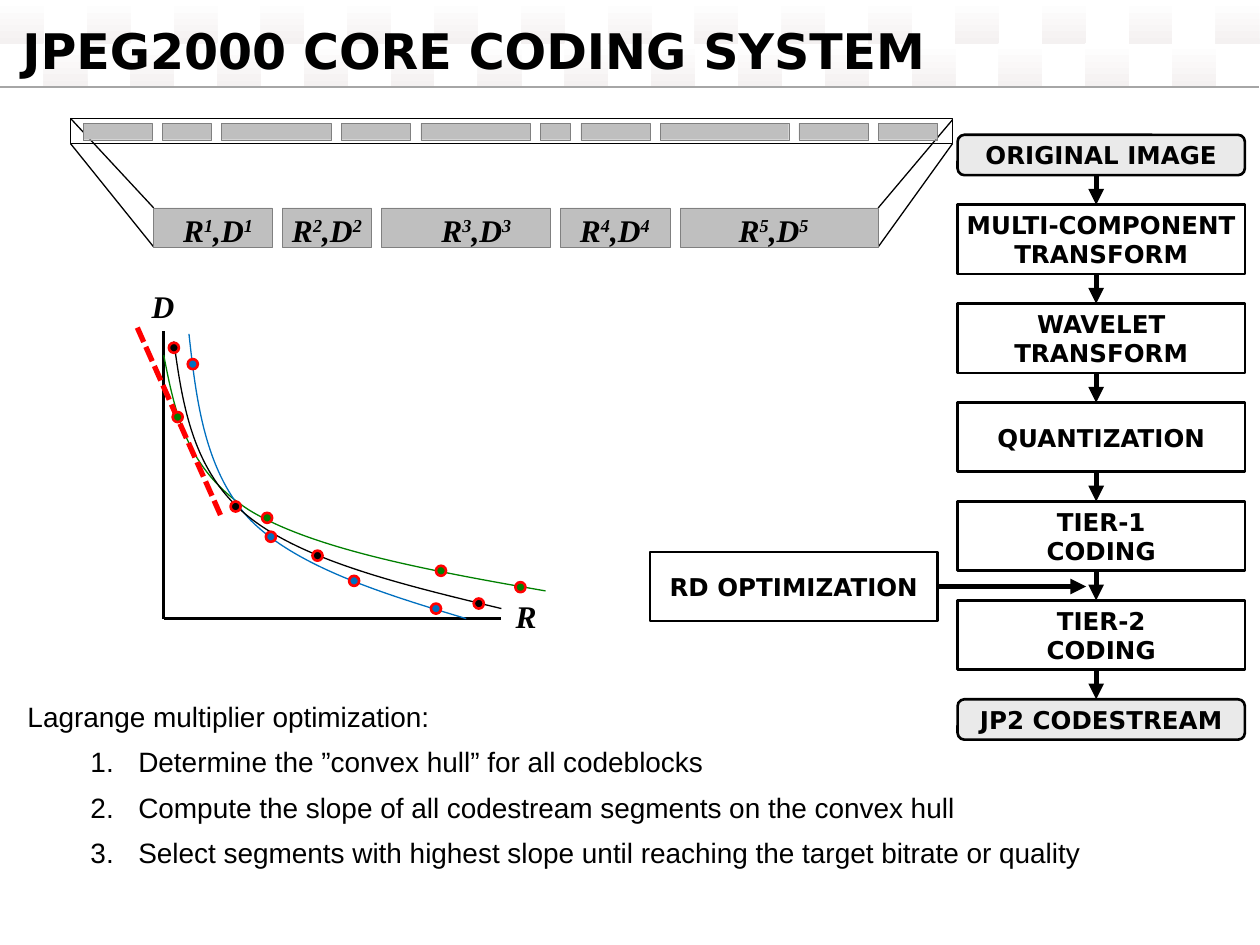
from lxml import etree
from pptx import Presentation
from pptx.dml.color import RGBColor
from pptx.enum.dml import MSO_LINE
from pptx.enum.shapes import MSO_CONNECTOR, MSO_SHAPE
from pptx.enum.text import MSO_ANCHOR, MSO_AUTO_SIZE, PP_ALIGN
from pptx.oxml.ns import qn
from pptx.util import Inches, Pt

RECT, ROUNDED, DOT = MSO_SHAPE.RECTANGLE, MSO_SHAPE.ROUNDED_RECTANGLE, MSO_SHAPE.OVAL
STRAIGHT = MSO_CONNECTOR.STRAIGHT
LEFT, CENTER = PP_ALIGN.LEFT, PP_ALIGN.CENTER

BLACK = RGBColor(0x00, 0x00, 0x00)
WHITE = RGBColor(0xFF, 0xFF, 0xFF)
RED = RGBColor(0xFF, 0x00, 0x00)
GREEN = RGBColor(0x00, 0x80, 0x00)
BLUE = RGBColor(0x00, 0x70, 0xC0)
TILE = RGBColor(0xF4, 0xF1, 0xF1)
RULE = RGBColor(0xA6, 0xA6, 0xA6)
SEGMENT = RGBColor(0xBF, 0xBF, 0xBF)
SEGMENT_EDGE = RGBColor(0x80, 0x80, 0x80)
TERMINAL = RGBColor(0xEA, 0xEA, 0xEA)

SANS, BODY, SERIF = "DejaVu Sans", "Arial", "Times New Roman"

# Content
TITLE = "JPEG2000 CORE CODING SYSTEM"
INTRO = "Lagrange multiplier optimization:"
STEPS = [
    "Determine the ”convex hull” for all codeblocks",
    "Compute the slope of all codestream segments on the convex hull",
    "Select segments with highest slope until reaching the target bitrate or quality",
]
FLOW = [
    "ORIGINAL IMAGE", "MULTI-COMPONENT\nTRANSFORM", "WAVELET\nTRANSFORM",
    "QUANTIZATION", "TIER-1\nCODING", "TIER-2\nCODING", "JP2 CODESTREAM",
]
STREAM_WIDTHS = [0.55, 0.39, 0.87, 0.55, 0.87, 0.24, 0.55, 1.02, 0.55, 0.47]
# Segment width, label left, label width
CODEBLOCK = [(0.94, 1.22, 1.02), (0.71, 2.16, 0.87), (1.34, 3.27, 1.02),
             (0.87, 4.37, 1.02), (1.57, 5.63, 1.02)]
ZOOM_LINES = [(0.56, 0.94, 1.22, 1.65), (0.56, 1.14, 1.22, 1.96),
              (7.56, 0.95, 6.97, 1.65), (7.56, 1.14, 6.97, 1.96)]
# Colour, Bezier points, top left corners of the markers
CURVES = [
    (GREEN, [(1.3, 2.82), (1.39, 3.28), (1.48, 3.73), (1.98, 4.05),
             (2.49, 4.36), (3.41, 4.53), (4.33, 4.69)],
     [(1.37, 3.27), (2.08, 4.07), (3.46, 4.49), (4.09, 4.62)]),
    (BLUE, [(1.5, 2.65), (1.56, 3.2), (1.63, 3.75), (1.99, 4.13),
            (2.36, 4.5), (3.03, 4.71), (3.7, 4.91)],
     [(1.49, 2.85), (2.11, 4.22), (2.77, 4.57), (3.42, 4.79)]),
    (BLACK, [(1.38, 2.71), (1.45, 3.22), (1.53, 3.74), (1.96, 4.09),
             (2.4, 4.45), (3.19, 4.64), (3.98, 4.83)],
     [(1.34, 2.72), (1.83, 3.98), (2.48, 4.37), (3.76, 4.75)]),
]

deck = Presentation()
deck.slide_width, deck.slide_height = Inches(10), Inches(7.5)
page = deck.slides.add_slide(deck.slide_layouts[6])


def add_box(kind, left, top, width, height, fill=None, edge=None, weight=0.75):
    box = page.shapes.add_shape(kind, *map(Inches, (left, top, width, height)))
    box.shadow.inherit = False
    if fill is None:
        box.fill.background()
    else:
        box.fill.solid()
        box.fill.fore_color.rgb = fill
    if edge is None:
        box.line.fill.background()
    else:
        box.line.color.rgb = edge
        box.line.width = Pt(weight)
    return box


def add_line(x1, y1, x2, y2, color=BLACK, weight=0.75, arrow=False):
    line = page.shapes.add_connector(STRAIGHT, *map(Inches, (x1, y1, x2, y2)))
    line.line.color.rgb = color
    line.line.width = Pt(weight)
    if arrow:
        etree.SubElement(line.line._get_or_add_ln(), qn("a:tailEnd"), type="triangle")
    etree.SubElement(line._element.spPr, qn("a:effectLst"))
    return line


def set_font(para, name, size, bold=False, italic=False):
    font = para.font
    font.name, font.size, font.bold, font.italic = name, Pt(size), bold, italic
    font.color.rgb = BLACK


def add_text(left, top, width, height):
    box = page.shapes.add_textbox(*map(Inches, (left, top, width, height)))
    box.text_frame.word_wrap = True
    box.text_frame.auto_size = MSO_AUTO_SIZE.SHAPE_TO_FIT_TEXT
    return box.text_frame


def add_label(left, top, width, height, parts, name=SERIF, size=18, align=CENTER):
    """Every second part is raised as a superscript."""
    para = add_text(left, top, width, height).paragraphs[0]
    para.alignment = align
    para.line_spacing = 1.01
    set_font(para, name, size, bold=True, italic=name == SERIF)
    for index, part in enumerate(parts):
        span = para.add_run()
        span.text = part
        if index % 2:
            span._r.get_or_add_rPr().set("baseline", "30000")


def add_stage(text, top, height, left=7.6, kind=RECT, fill=None):
    box = add_box(kind, left, top, 2.28, height, fill, BLACK, 1.5)
    frame = box.text_frame
    frame.text = text
    frame.word_wrap = False
    frame.vertical_anchor = MSO_ANCHOR.MIDDLE
    for para in frame.paragraphs:
        para.alignment = CENTER
        set_font(para, SANS, 14, bold=True)
    return box


def add_segments(left, top, height, widths, gap=0.08):
    for width in widths:
        add_box(RECT, left, top, width, height, SEGMENT, SEGMENT_EDGE, 0.25)
        left += width + gap


def add_curve(points, color):
    start, *rest = [(Inches(x), Inches(y)) for x, y in points]
    builder = page.shapes.build_freeform(*start)
    builder.add_line_segments(rest, close=False)
    curve = builder.convert_to_shape()
    curve.shadow.inherit = False
    curve.fill.background()
    curve.line.color.rgb = color
    curve.line.width = Pt(0.75)
    # Join each three line segments into one Bezier segment
    outline = next(curve._element.iter(qn("a:path")))
    segments = outline.findall(qn("a:lnTo"))
    for first in range(0, len(segments), 3):
        bezier = etree.SubElement(outline, qn("a:cubicBezTo"))
        for segment in segments[first:first + 3]:
            bezier.append(segment[0])
            outline.remove(segment)


# Header checkerboard, rule and title
for column in range(29):
    tile = add_box(ROUNDED, column * 0.3445, column % 2 * 0.34, 0.35, 0.35)
    tile.adjustments[0] = 0.005
    tile.fill.gradient()
    tile.fill.gradient_angle = 270
    for stop, color, position in zip(tile.fill.gradient_stops, (WHITE, TILE), (0, 1)):
        stop.color.rgb = color
        stop.position = position
add_line(0, 0.69, 9.99, 0.69, RULE)
add_label(0.08, 0.11, 7.56, 0.57, [TITLE], SANS, 28, LEFT)

# Codestream and the enlarged codeblock
add_box(RECT, 0.56, 0.94, 7, 0.2, edge=BLACK)
for ends in ZOOM_LINES:
    add_line(*ends)
add_segments(1.22, 1.65, 0.31, [width for width, _, _ in CODEBLOCK])
for number, (_, left, width) in enumerate(CODEBLOCK, 1):
    add_label(left, 1.62, width, 0.4, ["R", str(number), ",D", str(number)])
add_segments(0.66, 0.98, 0.13, STREAM_WIDTHS)

# Rate-distortion plot
add_line(1.3, 4.91, 3.98, 4.91, weight=1.5)
add_line(1.3, 2.63, 1.3, 4.91, weight=1.5)
add_label(3.94, 4.69, 0.47, 0.4, ["R"])
add_label(1.06, 2.23, 0.47, 0.4, ["D"])
for color, points, _ in CURVES:
    add_curve(points, color)
slope = add_line(1.09, 2.6, 1.76, 4.11, RED, 3)
slope.line.dash_style = MSO_LINE.SQUARE_DOT
for color, _, markers in CURVES:
    for left, top in markers:
        add_box(DOT, left, top, 0.08, 0.08, color, RED, 1.5)

# Explanation
frame = add_text(0.12, 5.49, 9.4, 1.43)
for index, text in enumerate([INTRO] + STEPS):
    para = frame.add_paragraph() if index else frame.paragraphs[0]
    para.text = text
    para.line_spacing = 1.04
    if index:
        para.space_before = Pt(6)
        props = para._p.get_or_add_pPr()
        props.set("marL", str(Inches(0.88)))
        props.set("indent", str(Inches(-0.38)))
        etree.SubElement(props, qn("a:buAutoNum"), type="arabicPeriod")
    set_font(para, BODY, 16)

# Coding pipeline
GAP, top = 0.235, 1.07
for index, text in enumerate(FLOW):
    terminal = index in (0, len(FLOW) - 1)
    height = 0.32 if terminal else 0.55
    if index:
        add_line(8.7, top - GAP, 8.7, top, weight=3, arrow=True)
    add_stage(text, top, height, kind=ROUNDED if terminal else RECT,
              fill=TERMINAL if terminal else None)
    top += height + GAP

# Rate-distortion optimization feeding the pipeline
optimizer = add_stage("RD OPTIMIZATION", 4.38, 0.55, left=5.16, fill=WHITE)
feed = add_line(7.44, 4.655, 8.62, 4.655, weight=3, arrow=True)
feed.begin_connect(optimizer, 3)

deck.save("out.pptx")
